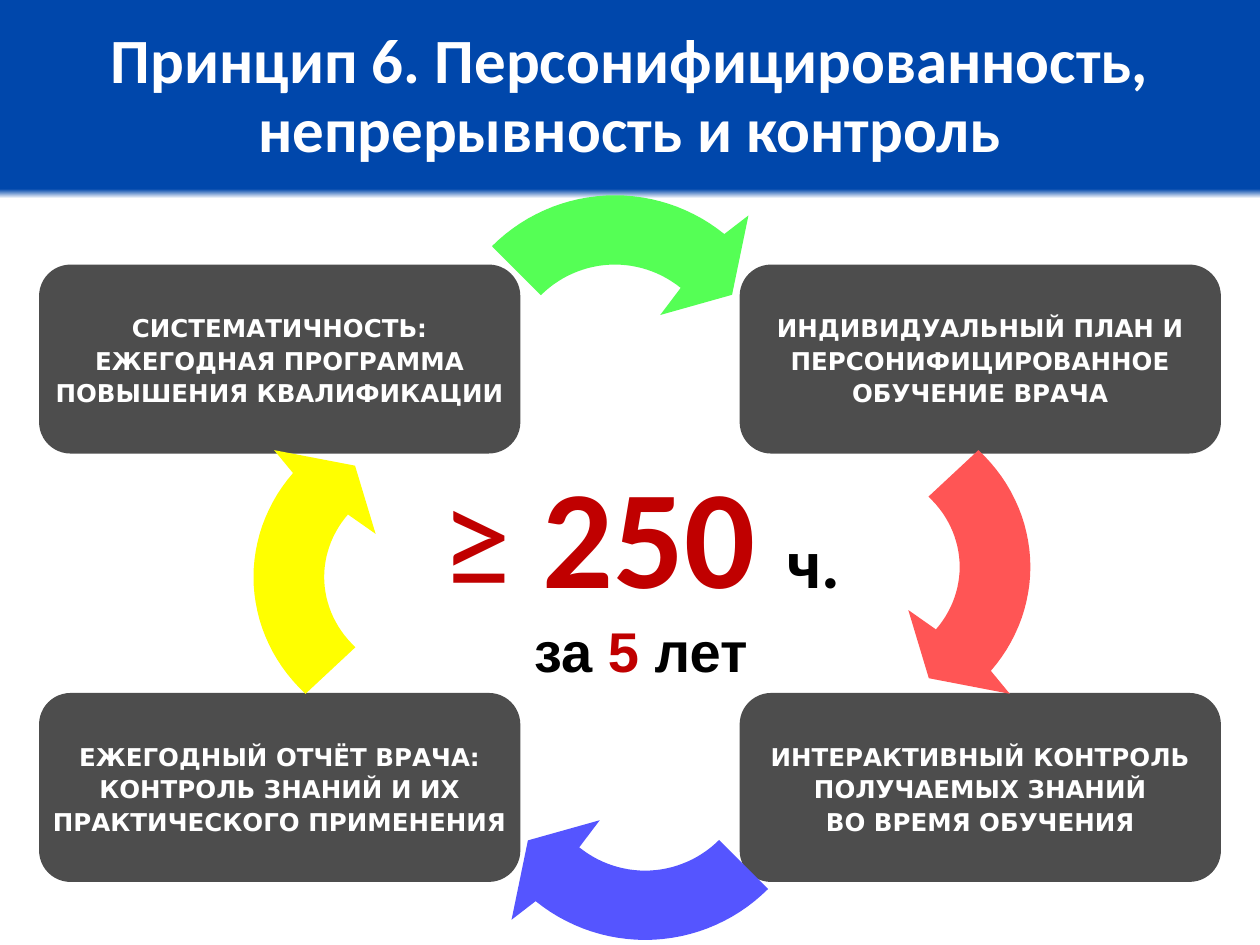
from math import cos, radians, sin

from lxml.etree import SubElement
from pptx import Presentation
from pptx.dml.color import RGBColor
from pptx.enum.shapes import MSO_SHAPE
from pptx.enum.text import MSO_ANCHOR, PP_ALIGN
from pptx.oxml.ns import qn
from pptx.util import Inches, Pt


def color(value):
    return RGBColor.from_string(value)


def add_run(paragraph, text, font_name, size, hex_color, bold=True):
    run = paragraph.add_run()
    run.text = text
    run.font.name = font_name
    run.font.size = Pt(size)
    run.font.bold = bold
    run.font.color.rgb = color(hex_color)


presentation = Presentation()
presentation.slide_width = Inches(10)
presentation.slide_height = Inches(7.5)
slide = presentation.slides.add_slide(presentation.slide_layouts[5])

# Background: blue band on top, white below
background = slide.background.fill
background.gradient()
background.gradient_angle = 270
stop_list = slide.element.find(".//" + qn("a:gsLst"))
for stop in list(stop_list):
    stop_list.remove(stop)
for percent, value in [(0, "0047AB"), (20, "0047AB"), (21, "FFFFFF"), (100, "FFFFFF")]:
    stop = SubElement(stop_list, qn("a:gs"), pos=str(percent * 1000))
    SubElement(stop, qn("a:srgbClr"), val=value)

# Title
title = slide.shapes.title
title.left, title.top, title.width, title.height = 0, 0, Inches(10), Inches(1.55)
title.text_frame.vertical_anchor = MSO_ANCHOR.MIDDLE
paragraph = title.text_frame.paragraphs[0]
paragraph.alignment = PP_ALIGN.CENTER
paragraph.line_spacing = 0.9
add_run(paragraph, "Принцип 6. Персонифицированность, непрерывность и контроль",
        "Calibri", 36, "FFFFFF")

# Hours in the centre
hours = slide.shapes.add_textbox(Inches(2.84), Inches(3.51), Inches(4.49), Inches(1.99))
hours.text_frame.word_wrap = True
amount = hours.text_frame.paragraphs[0]
period = hours.text_frame.add_paragraph()
amount.alignment = period.alignment = PP_ALIGN.CENTER
add_run(amount, "≥", "Calibri", 80, "C00000", bold=False)
add_run(amount, " 250 ", "Calibri", 80, "C00000")
add_run(amount, "ч.", "Calibri", 40, "000000")
add_run(period, "за", "Arial", 32, "000000")
add_run(period, " 5 ", "Arial", 32, "C00000")
add_run(period, "лет", "Arial", 32, "000000")

# Four stages: each inner list is a paragraph, split by line breaks
left, right, top, bottom = 0.31, 5.87, 2.1, 5.5
stages = [
    (right, top, [["ИНДИВИДУАЛЬНЫЙ ПЛАН И"], ["ПЕРСОНИФИЦИРОВАННОЕ"], ["ОБУЧЕНИЕ ВРАЧА"]]),
    (right, bottom, [["ИНТЕРАКТИВНЫЙ КОНТРОЛЬ", "ПОЛУЧАЕМЫХ ЗНАНИЙ"],
                     ["ВО ВРЕМЯ ОБУЧЕНИЯ"]]),
    (left, top, [["СИСТЕМАТИЧНОСТЬ:", "ЕЖЕГОДНАЯ ПРОГРАММА"],
                 ["ПОВЫШЕНИЯ КВАЛИФИКАЦИИ"]]),
    (left, bottom, [["ЕЖЕГОДНЫЙ ОТЧЁТ ВРАЧА:"], ["КОНТРОЛЬ ЗНАНИЙ И ИХ"],
                    ["ПРАКТИЧЕСКОГО ПРИМЕНЕНИЯ"]]),
]
for x, y, paragraphs in stages:
    box = slide.shapes.add_shape(MSO_SHAPE.ROUNDED_RECTANGLE,
                                 Inches(x), Inches(y), Inches(3.82), Inches(1.5))
    box.shadow.inherit = False
    box.adjustments[0] = 0.167
    box.fill.solid()
    box.fill.fore_color.rgb = color("4D4D4D")
    box.line.fill.background()
    frame = box.text_frame
    frame.word_wrap = False
    frame.vertical_anchor = MSO_ANCHOR.MIDDLE
    for index, lines in enumerate(paragraphs):
        paragraph = frame.add_paragraph() if index else frame.paragraphs[0]
        paragraph.alignment = PP_ALIGN.CENTER
        paragraph.line_spacing = 1.1
        for number, line in enumerate(lines):
            if number:
                paragraph.add_line_break()
            add_run(paragraph, line, "DejaVu Sans", 14, "FFFFFF")

# Curved arrow around its ring centre, pointing clockwise over the top
outer_radius, inner_radius = 1.38, 0.83
outer_arc = [(outer_radius * cos(radians(a)), outer_radius * sin(radians(a)))
             for a in range(225, 312, 3)]
inner_arc = [(inner_radius * cos(radians(a)), inner_radius * sin(radians(a)))
             for a in range(309, 222, -3)]
arrow_head = [(1.06, -1.22), (0.93, -0.59), (0.36, -0.43)]
outline = outer_arc + arrow_head + inner_arc

# Cycle arrows: centre, clockwise turn, scale along and across the arrow, colour
arrows = [
    (5.12, 6.08, 180, 1, 1, "5555FF"),
    (6.77, 4.5, 90, 0.95, 1.02, "FF5555"),
    (4.88, 2.93, 0, 1, 1, "55FF55"),
    (3.42, 4.58, 270, 0.95, 1.02, "FFFF00"),
]
for center_x, center_y, turn, along, across, fill_color in arrows:
    cosine, sine = cos(radians(turn)), sin(radians(turn))
    points = [(Inches(center_x + x * along * cosine - y * across * sine),
               Inches(center_y + x * along * sine + y * across * cosine))
              for x, y in outline]
    builder = slide.shapes.build_freeform(*points[0])
    builder.add_line_segments(points[1:], close=True)
    arrow = builder.convert_to_shape()
    arrow.shadow.inherit = False
    arrow.fill.solid()
    arrow.fill.fore_color.rgb = color(fill_color)
    arrow.line.fill.background()

presentation.save("out.pptx")
